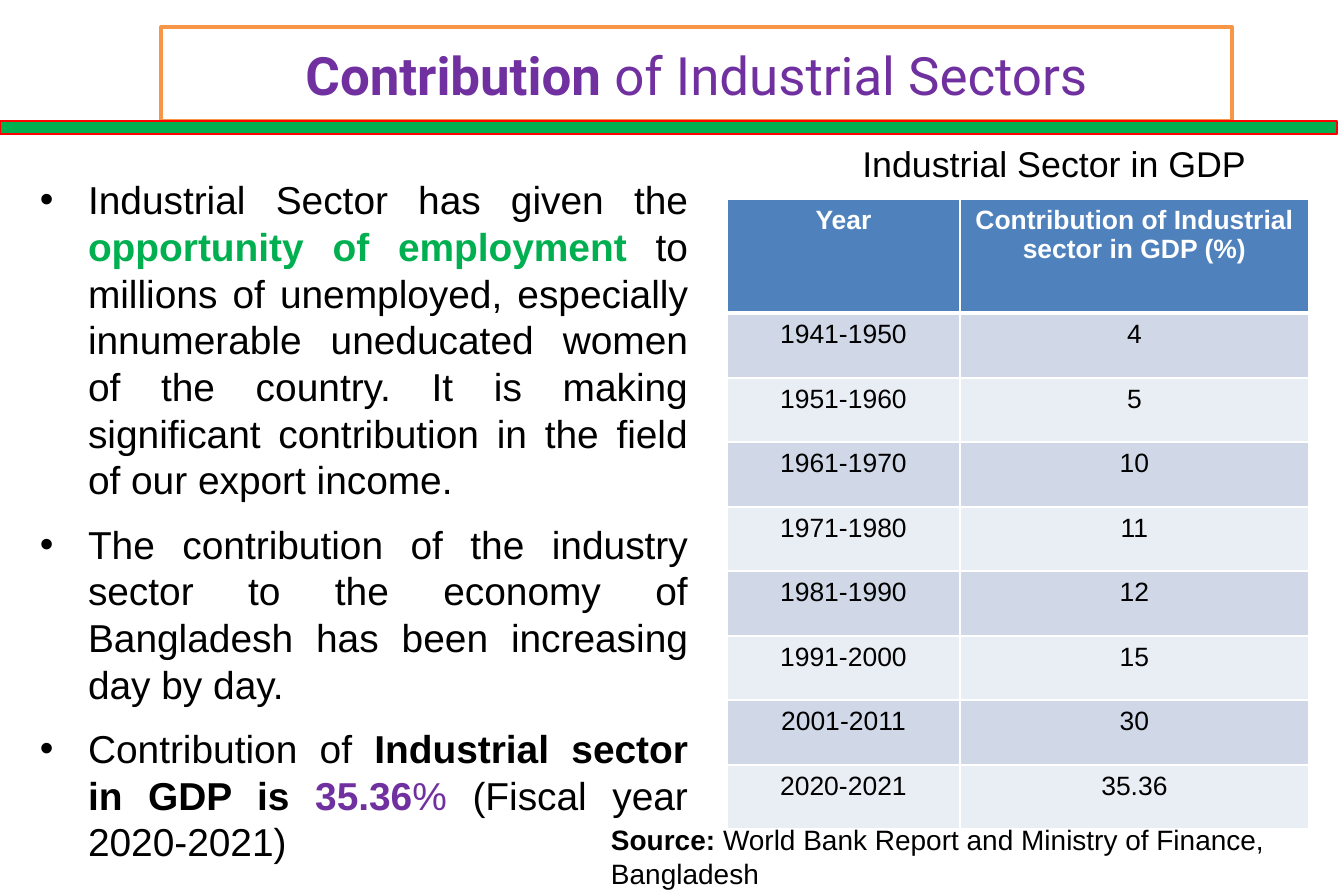
from lxml import etree
from pptx import Presentation
from pptx import util as u
from pptx.dml.color import RGBColor
from pptx.enum import shapes, text
from pptx.oxml.ns import qn

PX = 914400 // 112
COLOURS = {
    "black": "000000", "white": "FFFFFF", "purple": "7030A0", "green": "00B050",
    "red": "FF0000", "orange": "F79646", "header": "4F81BD",
    "odd row": "D0D8E8", "even row": "E9EDF4",
}


def colour(name):
    return RGBColor.from_string(COLOURS[name])


def write(paragraph, pieces, size, align, font="Arial"):
    """Fill a paragraph with (words, colour, bold) pieces."""
    paragraph.alignment = align
    for words, tint, bold in pieces:
        run = paragraph.add_run()
        run.text = words
        run.font.name, run.font.size, run.font.bold = font, u.Pt(size), bold
        run.font.color.rgb = colour(tint)


deck = Presentation()
deck.slide_width, deck.slide_height = 1344 * PX, 896 * PX
slide = deck.slides.add_slide(deck.slide_layouts[1])
heading, points = slide.placeholders

# Title and body frames
for holder, box, anchor in (
    (heading, (161, 27, 1071, 94), text.MSO_ANCHOR.MIDDLE),
    (points, (28, 169, 672, 697), text.MSO_ANCHOR.TOP),
):
    holder.left, holder.top, holder.width, holder.height = (n * PX for n in box)
    frame = holder.text_frame
    frame.word_wrap = True
    frame.auto_size = text.MSO_AUTO_SIZE.NONE
    frame.vertical_anchor = anchor
    frame.margin_left = frame.margin_right = 12 * PX
    frame.margin_top = frame.margin_bottom = 7 * PX

heading.line.color.rgb = colour("orange")
heading.line.width = u.Pt(2.5)
write(heading.text_frame.paragraphs[0],
      [("Contribution", "purple", True), (" of Industrial Sectors", "purple", False)],
      34, text.PP_ALIGN.CENTER, "Roboto")

# Bulleted points
POINTS = [
    [("Industrial Sector has given the ", "black", False),
     ("opportunity of employment ", "green", True),
     ("to millions of unemployed, especially innumerable uneducated women of the country. "
      "It is making significant contribution in the field of our export income.",
      "black", False)],
    [("The contribution of the industry sector to the economy of Bangladesh "
      "has been increasing day by day.", "black", False)],
    [("Contribution of ", "black", False),
     ("Industrial sector in GDP is ", "black", True),
     ("35.36", "purple", True), ("% ", "purple", False),
     ("(Fiscal year 2020-2021)", "black", False)],
]
for i, pieces in enumerate(POINTS):
    frame = points.text_frame
    point = frame.add_paragraph() if i else frame.paragraphs[0]
    props = point._p.get_or_add_pPr()
    props.set("marL", str(48 * PX))
    props.set("indent", str(-48 * PX))
    point.space_before = u.Pt(11.4 if i else 0)
    write(point, pieces, 25, text.PP_ALIGN.JUSTIFY)

# Green bar under the title
bar = slide.shapes.add_shape(shapes.MSO_SHAPE.FLOWCHART_PROCESS,
                             0, 121 * PX, 1337 * PX, 13 * PX)
bar.shadow.inherit = False
bar.fill.solid()
bar.fill.fore_color.rgb = colour("green")
bar.line.color.rgb = colour("red")
bar.line.width = u.Pt(0.75)

# GDP table
SHARES = [
    ("Year", "Contribution of Industrial sector in GDP (%)"),
    ("1941-1950", "4"), ("1951-1960", "5"), ("1961-1970", "10"),
    ("1971-1980", "11"), ("1981-1990", "12"), ("1991-2000", "15"),
    ("2001-2011", "30"), ("2020-2021", "35.36"),
]
gdp = slide.shapes.add_table(len(SHARES), 2, 727 * PX, 199 * PX, 582 * PX, 630 * PX).table
gdp.columns[0].width, gdp.columns[1].width = 233 * PX, 349 * PX
for r, shares in enumerate(SHARES):
    gdp.rows[r].height = (64 + r % 2 if r else 114) * PX
    for c, words in enumerate(shares):
        cell = gdp.cell(r, c)
        cell.margin_left = cell.margin_right = 13 * PX
        cell.margin_top = cell.margin_bottom = 6 * PX
        for side in "LRTB":
            thick = (r, side) in ((0, "B"), (1, "T"))
            edge = etree.SubElement(cell._tc.get_or_add_tcPr(), qn("a:ln" + side),
                                    w=str(u.Pt(3 if thick else 1)))
            paint = etree.SubElement(edge, qn("a:solidFill"))
            etree.SubElement(paint, qn("a:srgbClr"), val=COLOURS["white"])
        cell.fill.solid()
        cell.fill.fore_color.rgb = colour(
            "header" if r == 0 else "odd row" if r % 2 else "even row")
        write(cell.text_frame.paragraphs[0], [(words, "black" if r else "white", r == 0)],
              17, text.PP_ALIGN.CENTER)

# Source line and table caption
for box, pieces, size, align in (
    ((604, 829, 704, 54),
     [("Source: ", "black", True),
      ("World Bank Report and Ministry of Finance, Bangladesh", "black", False)],
     18, text.PP_ALIGN.LEFT),
    ((806, 138, 497, 50), [("Industrial Sector in GDP", "black", False)],
     23, text.PP_ALIGN.CENTER),
):
    frame = slide.shapes.add_textbox(*(n * PX for n in box)).text_frame
    frame.word_wrap = True
    frame.vertical_anchor = text.MSO_ANCHOR.MIDDLE
    frame.margin_left = frame.margin_right = 7 * PX
    frame.margin_top = frame.margin_bottom = 7 * PX
    write(frame.paragraphs[0], pieces, size, align)

deck.save("out.pptx")
